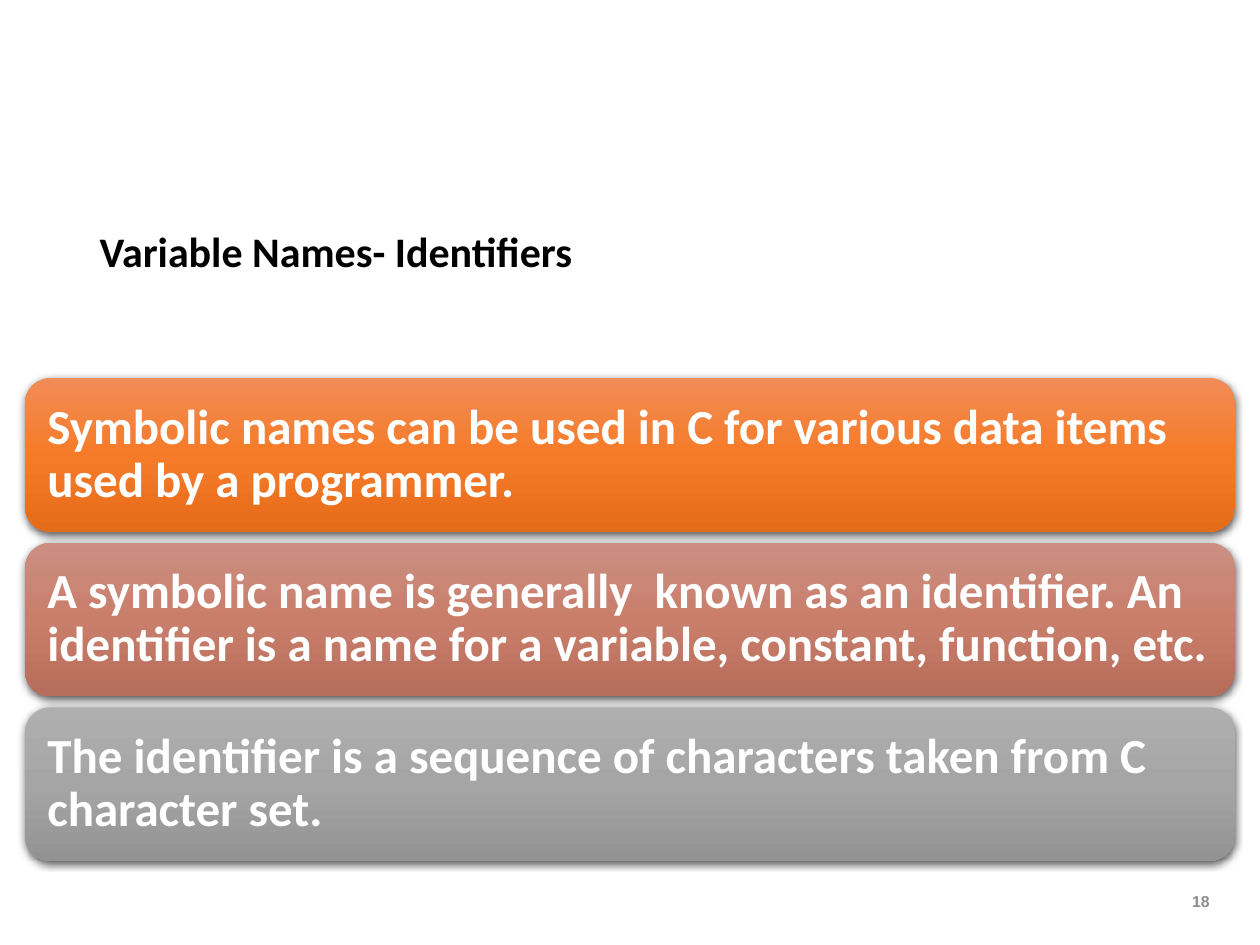
from copy import deepcopy

from lxml import etree
from pptx import Presentation
from pptx.dml.color import RGBColor
from pptx.enum import shapes, text
from pptx.oxml import ns
from pptx.util import Emu, Pt

PX = 914400 / 126  # EMU in one px
COLORS = {
    "title": "000000", "card_text": "FFFFFF", "number": "8C8C8C", "shadow": "000000",
    "orange": ("F18C57", "F67B28", "E56C19"),
    "clay": ("CB8F81", "C97E6B", "B76D5B"),
    "gray": ("AFAFAF", "A5A5A5", "939393"),
}
STATEMENTS = [
    ("orange", "Symbolic names can be used in C for various data items used by a programmer."),
    ("clay", "A symbolic name is generally  known as an identifier. "
             "An identifier is a name for a variable, constant, function, etc."),
    ("gray", "The identifier is a sequence of characters taken from C character set."),
]


def px(*lengths):
    return [Emu(round(length * PX)) for length in lengths]


def write(shape, wording, color, font, paragraph, frame):
    """Fill a shape with one paragraph in the given formats."""
    body = shape.text_frame
    body.text = wording
    line = body.paragraphs[0]
    frame = {"word_wrap": True, "auto_size": text.MSO_AUTO_SIZE.NONE, **frame}
    for target, formats in ((body, frame), (line, paragraph), (line.runs[0].font, font)):
        for name, value in formats.items():
            setattr(target, name, value)
    line.runs[0].font.color.rgb = RGBColor.from_string(COLORS[color])


def shade(shape, colors):
    """Top-to-bottom gradient with evenly spaced stops."""
    shape.fill.gradient()
    shape.fill.gradient_angle = 270
    stop_list = shape._element.spPr.find(".//" + ns.qn("a:gsLst"))
    stop_list.insert(1, deepcopy(stop_list[0]))
    for index, (stop, color) in enumerate(zip(shape.fill.gradient_stops, colors)):
        stop.color.rgb = RGBColor.from_string(color)
        stop.position = index / (len(colors) - 1)


def cast_shadow(shape):
    shape.shadow.inherit = False
    effects = shape._element.spPr.find(ns.qn("a:effectLst"))
    shadow = etree.SubElement(effects, ns.qn("a:outerShdw"), blurRad=str(Pt(4.5)),
                              dist=str(Pt(1.5)), dir="5400000", rotWithShape="0")
    color = etree.SubElement(shadow, ns.qn("a:srgbClr"), val=COLORS["shadow"])
    etree.SubElement(color, ns.qn("a:alpha"), val="63000")


def add_title(slide, left, top, width, height):
    title = slide.shapes.title
    title.left, title.top, title.width, title.height = px(left, top, width, height)
    write(title, "Variable Names- Identifiers", "title",
          {"name": "Calibri", "size": Pt(24), "bold": True},
          {"alignment": text.PP_ALIGN.LEFT, "line_spacing": 0.9},
          {"vertical_anchor": text.MSO_ANCHOR.BOTTOM})


def add_statements(slide, left, top, width, height, gap=11):
    """Stack of equal cards that fills the box."""
    card_height = (height - gap * (len(STATEMENTS) - 1)) / len(STATEMENTS)
    inset = px(15)[0]
    margins = {f"margin_{side}": inset for side in ("left", "top", "right", "bottom")}
    for row, (palette, wording) in enumerate(STATEMENTS):
        card = slide.shapes.add_shape(
            shapes.MSO_SHAPE.ROUNDED_RECTANGLE,
            *px(left, top + row * (card_height + gap), width, card_height))
        shade(card, COLORS[palette])
        card.line.fill.background()
        cast_shadow(card)
        write(card, wording, "card_text",
              {"name": "Calibri", "size": Pt(28), "bold": True},
              {"alignment": text.PP_ALIGN.LEFT, "line_spacing": 0.9},
              {"vertical_anchor": text.MSO_ANCHOR.MIDDLE, **margins})


def add_page_number(slide, left, top, width, height):
    number = slide.shapes.add_textbox(*px(left, top, width, height))
    write(number, "18", "number",
          {"name": "Arial", "size": Pt(9), "bold": True},
          {"alignment": text.PP_ALIGN.RIGHT, "space_after": Pt(6)},
          {"vertical_anchor": text.MSO_ANCHOR.MIDDLE})


def main():
    deck = Presentation()
    deck.slide_width, deck.slide_height = px(1260, 945)
    slide = deck.slides.add_slide(deck.slide_layouts.get_by_name("Title Only"))
    # Heading, cards and page number
    add_title(slide, 87, 63, 815, 220)
    add_statements(slide, 25, 378, 1210, 483)
    add_page_number(slide, 1173, 876, 49, 50)
    deck.save("out.pptx")


if __name__ == "__main__":
    main()
